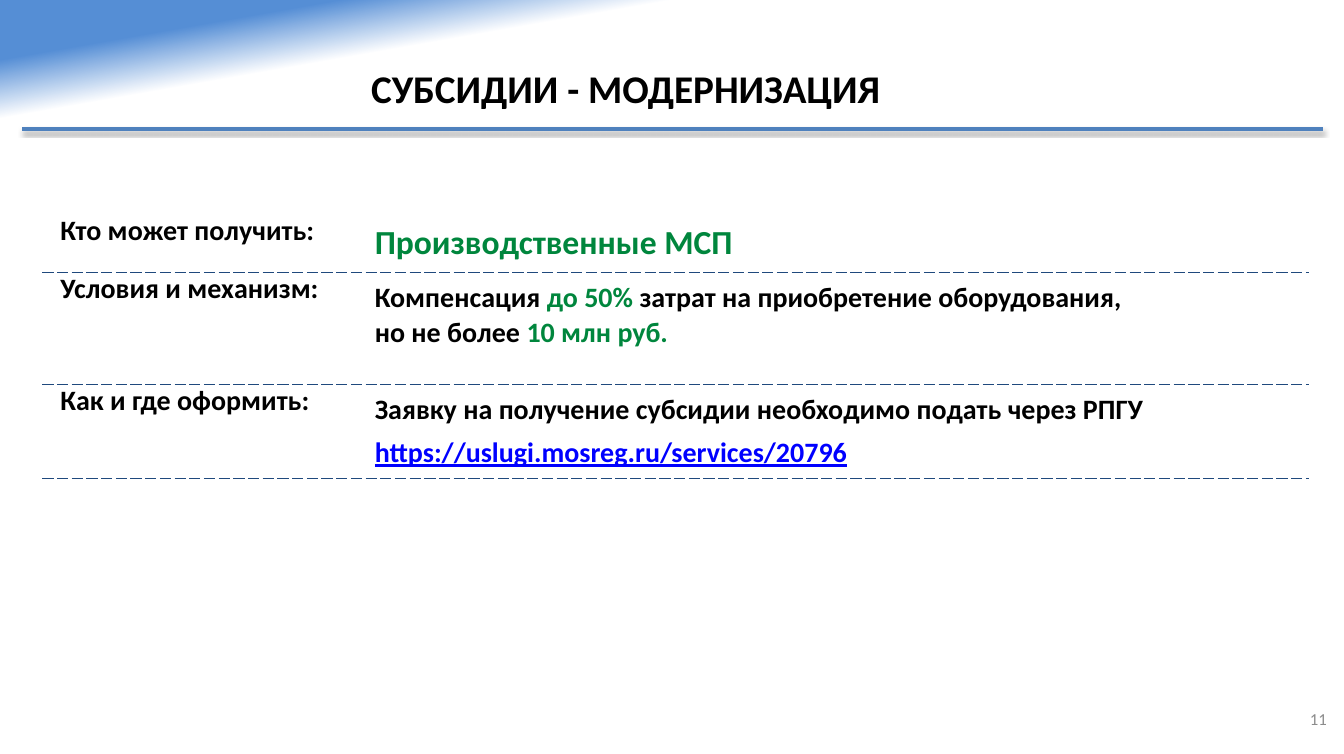
from lxml import etree
from pptx import Presentation
from pptx.dml.color import RGBColor
from pptx.enum.shapes import MSO_CONNECTOR
from pptx.enum.text import MSO_ANCHOR, PP_ALIGN
from pptx.oxml import parse_xml
from pptx.oxml.ns import nsdecls
from pptx.util import Inches, Pt

BLACK, GREEN, LINK, NAVY = "000000", "00863D", "0000FF", "1F497D"

# Each row: label, height, paragraphs of (text, size, colour) runs
CONDITIONS = [
    ("Кто может получить:", 0.49, [[("Производственные МСП", 24, GREEN)]]),
    ("Условия и механизм:", 1.11, [[
        ("Компенсация ", 20, BLACK),
        ("до 50% ", 20, GREEN),
        ("затрат на приобретение оборудования,\vно не более ", 20, BLACK),
        ("10 млн руб.", 20, GREEN)]]),
    ("Как и где оформить:", 0.91, [
        [("Заявку на получение субсидии необходимо подать через РПГУ", 20, BLACK)],
        [("https://uslugi.mosreg.ru/services/20796", 20, LINK)]]),
]


def rgb(value):
    return RGBColor.from_string(value)


def apply(target, settings):
    for name, value in settings.items():
        setattr(target, name, value)


def add_run(paragraph, text, size, colour, bold=True):
    # A vertical tab in the text stands for a line break
    for index, line in enumerate(text.split("\v")):
        if index:
            paragraph.add_line_break()
        run = paragraph.add_run()
        run.text = line
        apply(run.font, {"name": "Calibri", "size": Pt(size), "bold": bold,
                         "underline": colour == LINK})
        run.font.color.rgb = rgb(colour)


def add_text(slide, box, inset, align, anchor, run):
    frame = slide.shapes.add_textbox(*map(Inches, box)).text_frame
    across, down = map(Inches, inset)
    apply(frame, {"word_wrap": True, "vertical_anchor": anchor,
                  "margin_left": across, "margin_right": across,
                  "margin_top": down, "margin_bottom": down})
    frame.paragraphs[0].alignment = align
    add_run(frame.paragraphs[0], *run)


def paint_background(slide):
    fill = slide.background.fill
    fill.gradient()
    fill.gradient_angle = 280
    for stop, position, colour in zip(fill.gradient_stops, (0.06, 0.12), ("558ED5", "FFFFFF")):
        stop.position = position
        stop.color.rgb = rgb(colour)


def add_title_rule(slide):
    rule = slide.shapes.add_connector(
        MSO_CONNECTOR.STRAIGHT, Inches(0.22), Inches(1.28), Inches(13.13), Inches(1.28))
    rule.line.color.rgb = rgb("4F81BD")
    rule.line.width = Pt(3)
    rule._element.spPr.append(parse_xml(
        f'<a:effectLst {nsdecls("a")}><a:outerShdw blurRad="{Pt(3.1)}" dist="{Pt(1.8)}" '
        'dir="5400000" rotWithShape="0"><a:srgbClr val="000000"><a:alpha val="35000"/>'
        '</a:srgbClr></a:outerShdw></a:effectLst>'))


def style_cell(cell, dashed_edges):
    cell.fill.background()
    apply(cell, {"margin_left": Inches(0.18), "margin_right": Inches(0.18),
                 "margin_top": Inches(0.09), "margin_bottom": Inches(0.09)})
    properties = cell._tc.get_or_add_tcPr()
    for index, edge in enumerate("LRTB"):
        border = parse_xml(f'<a:ln{edge} {nsdecls("a")} w="{Pt(0.5)}"/>')
        if edge in dashed_edges:
            border.append(parse_xml(
                f'<a:solidFill {nsdecls("a")}><a:srgbClr val="{NAVY}"/></a:solidFill>'))
            border.append(parse_xml(f'<a:prstDash {nsdecls("a")} val="dash"/>'))
        else:
            etree.SubElement(border, border.tag.replace(f"ln{edge}", "noFill"))
        properties.insert(index, border)


def add_conditions(slide):
    table = slide.shapes.add_table(
        len(CONDITIONS), 2, Inches(0.42), Inches(2.12), Inches(12.57), Inches(2.51)).table
    apply(table, {"first_row": False, "horz_banding": False})
    for column, width in zip(table.columns, (3.12, 9.45)):
        column.width = Inches(width)

    for index, (label, height, paragraphs) in enumerate(CONDITIONS):
        table.rows[index].height = Inches(height)
        label_cell, detail_cell = table.rows[index].cells
        for cell in (label_cell, detail_cell):
            style_cell(cell, "TB" if index else "B")

        # Label column
        heading = label_cell.text_frame.paragraphs[0]
        apply(heading, {"alignment": PP_ALIGN.JUSTIFY, "line_spacing": Pt(18)})
        add_run(heading, label, 20, BLACK)

        # Detail column
        frame = detail_cell.text_frame
        for number, runs in enumerate(paragraphs):
            paragraph = frame.add_paragraph() if number else frame.paragraphs[0]
            if number:
                paragraph.space_before = Pt(6)
            for run in runs:
                add_run(paragraph, *run)


def main():
    presentation = Presentation()
    apply(presentation, {"slide_width": Inches(13.34), "slide_height": Inches(7.48)})
    slide = presentation.slides.add_slide(presentation.slide_layouts[6])
    paint_background(slide)

    # Slide number and title
    add_text(slide, (12.71, 6.93, 0.59, 0.4), (0.13, 0.07), PP_ALIGN.RIGHT,
             MSO_ANCHOR.MIDDLE, ("11", 12, "8C8C8C", False))
    add_text(slide, (2.58, 0.59, 7.26, 0.57), (0, 0.05), PP_ALIGN.CENTER,
             MSO_ANCHOR.TOP, ("СУБСИДИИ - МОДЕРНИЗАЦИЯ", 28, BLACK))

    add_conditions(slide)
    add_title_rule(slide)
    presentation.save("out.pptx")


if __name__ == "__main__":
    main()
